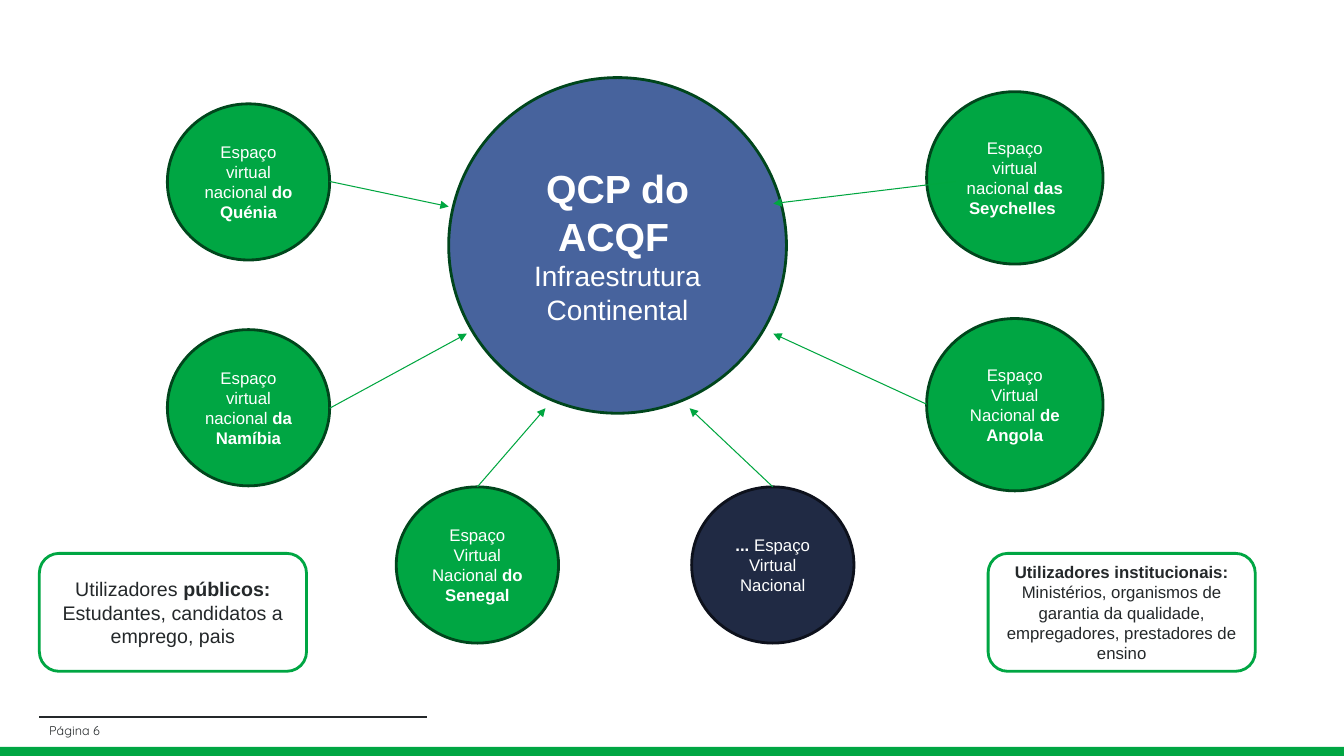
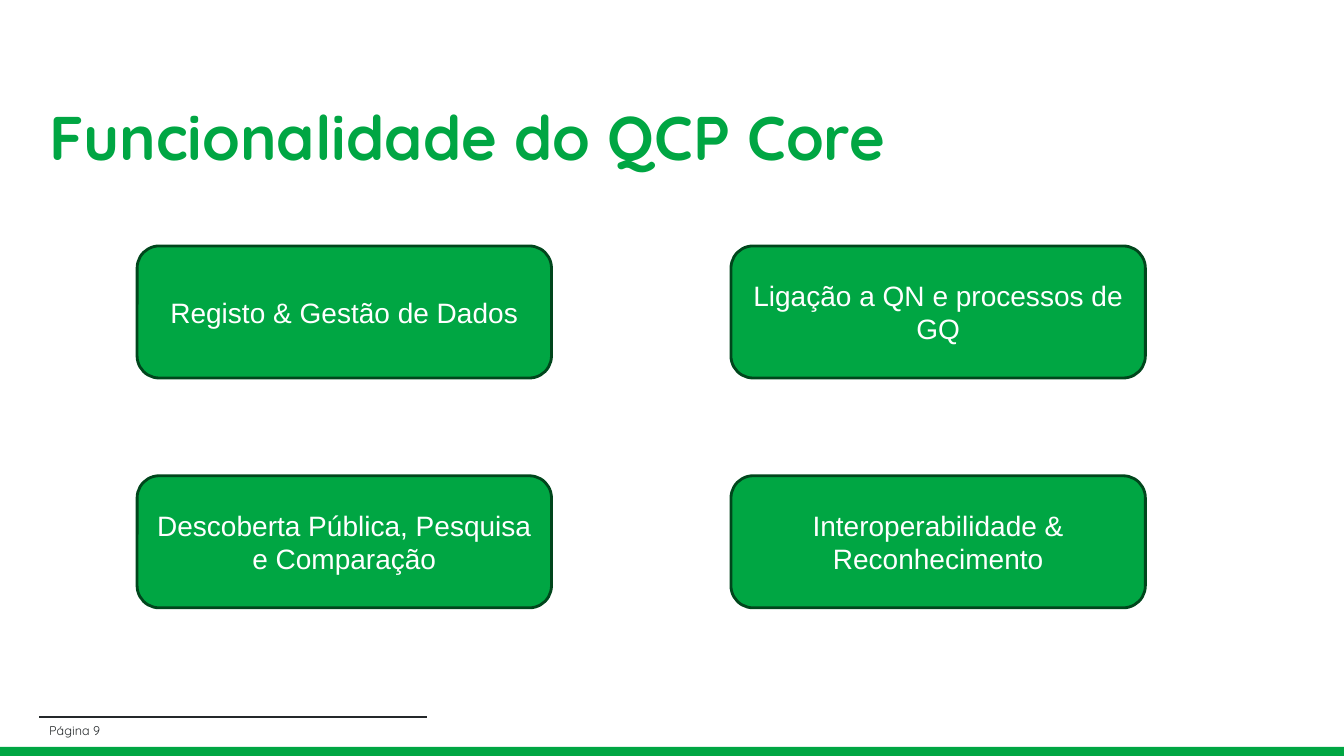
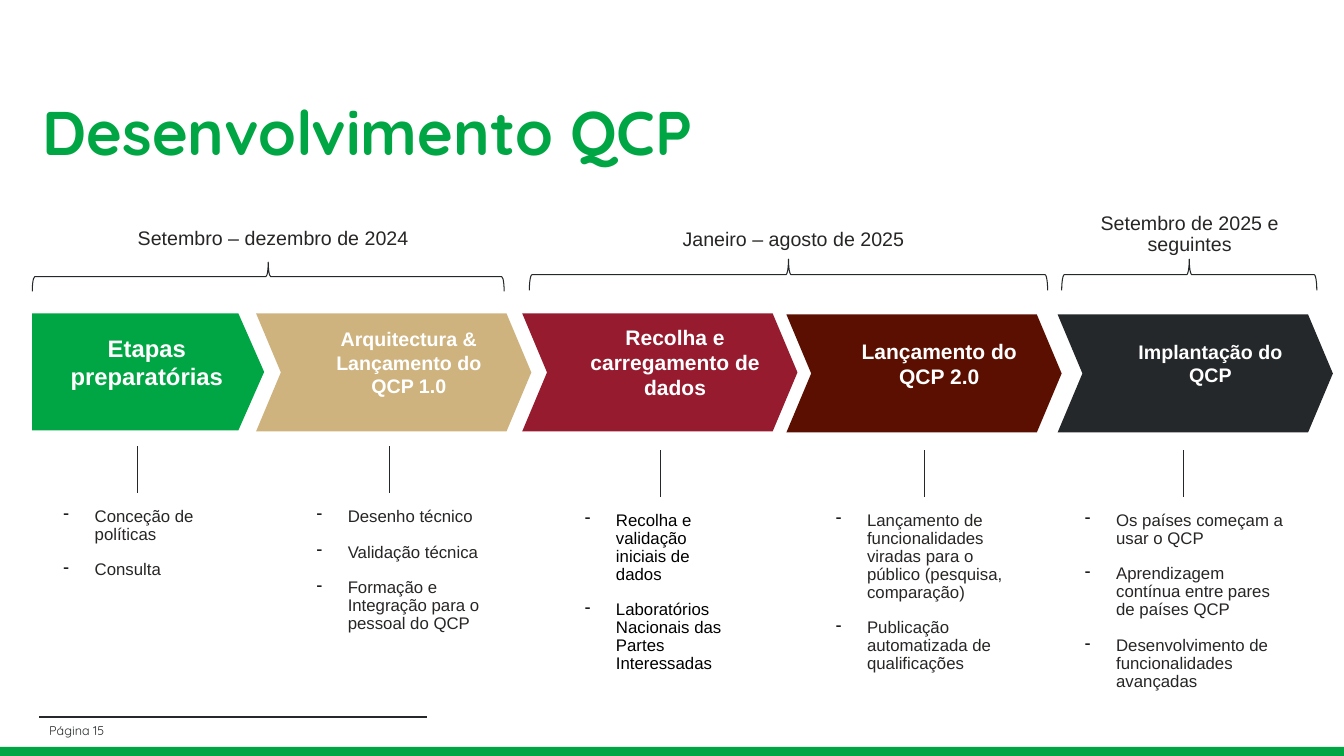
"""Build three slides about the QCP platform."""
from lxml import etree
from pptx import Presentation
from pptx import util as u
from pptx.dml.color import RGBColor
from pptx.enum import shapes, text
from pptx.oxml import ns

COLORS = {
    "green": "00A643", "arrow": "00A640", "forest": "00461C", "blue": "47639D",
    "navy": "202A44", "night": "0D111C", "ink": "24282A", "body": "282625",
    "white": "FFFFFF", "black": "000000", "sand": "CEB37E", "wine": "971B2F",
    "brown": "5B0F00",
}
SHAPE = shapes.MSO_SHAPE
CENTER, LEFT = text.PP_ALIGN.CENTER, text.PP_ALIGN.LEFT
MIDDLE, TOP = text.MSO_ANCHOR.MIDDLE, text.MSO_ANCHOR.TOP
INSET = (0.1, 0.05, 0.1, 0.05)


def rgb(name):
    """Return the palette colour."""
    return RGBColor.from_string(COLORS[name])


def add_bullet(p):
    """Give a paragraph a hanging black dash."""
    pPr = p._p.get_or_add_pPr()
    pPr.set("marL", str(u.Inches(0.31)))
    pPr.set("indent", str(-u.Inches(0.31)))
    clr = etree.SubElement(pPr, ns.qn("a:buClr"))
    etree.SubElement(clr, ns.qn("a:srgbClr"), val=COLORS["black"])
    etree.SubElement(pPr, ns.qn("a:buChar"), char="-")


def write(tf, paragraphs, size=12, color="white", font="Arial", bold=False,
          bold_size=None, align=CENTER, anchor=MIDDLE, inset=INSET,
          spacing=None, gap=0, bullet=False):
    """Fill a text frame; ** toggles bold and a newline breaks the line."""
    tf.word_wrap = True
    tf.auto_size = text.MSO_AUTO_SIZE.NONE
    tf.vertical_anchor = anchor
    tf.margin_left, tf.margin_top, tf.margin_right, tf.margin_bottom = map(u.Inches, inset)
    for i, paragraph in enumerate(paragraphs):
        p = tf.add_paragraph() if i else tf.paragraphs[0]
        if bullet:
            add_bullet(p)
        p.alignment = align
        if spacing:
            p.line_spacing = spacing
        if i and gap:
            p.space_before = u.Pt(gap)
        for j, part in enumerate(paragraph.split("**")):
            strong = bold != bool(j % 2)
            for k, line in enumerate(part.split("\n")):
                if k:
                    p.add_line_break()
                if not line:
                    continue
                r = p.add_run()
                r.text = line
                r.font.name, r.font.bold = font, strong
                r.font.size = u.Pt(bold_size if strong and bold_size else size)
                r.font.color.rgb = rgb(color)


class Deck:
    """Hold the shared style and the current slide."""

    def __init__(self):
        """Start an empty widescreen presentation."""
        self.prs = Presentation()
        self.prs.slide_width, self.prs.slide_height = u.Inches(13.33), u.Inches(7.5)
        self.s = None

    def slide(self, page, title=None, box=None):
        """Add a slide with its footer and optional title."""
        self.s = self.prs.slides.add_slide(self.prs.slide_layouts[5 if title else 6])
        self.shape(SHAPE.RECTANGLE, (0, 7.41, 13.33, 0.09), "green")
        self.line((0.39, 7.11), (4.24, 7.11), "ink", 1.5)
        if title:
            sp = self.s.shapes.title
            sp.left, sp.top, sp.width, sp.height = map(u.Inches, box)
            write(sp.text_frame, [title], size=44, color="green", font="Quicksand",
                  bold=True, align=LEFT, spacing=0.9)
        self.label((0.39, 7.15, 4.06, 0.19), [f"Página {page}"], size=9, color="ink",
                   font="Quicksand", align=LEFT)

    def shape(self, kind, box, fill=None, line=None, weight=2, paragraphs=(), **fmt):
        """Add a preset shape with optional text."""
        sp = self.s.shapes.add_shape(kind, *map(u.Inches, box))
        sp.shadow.inherit = False
        if fill:
            sp.fill.solid()
            sp.fill.fore_color.rgb = rgb(fill)
        else:
            sp.fill.background()
        if line:
            sp.line.color.rgb = rgb(line)
            sp.line.width = u.Pt(weight)
        else:
            sp.line.fill.background()
        if paragraphs:
            write(sp.text_frame, paragraphs, **fmt)
        return sp

    def label(self, box, paragraphs, **fmt):
        """Add a text box."""
        sp = self.s.shapes.add_textbox(*map(u.Inches, box))
        write(sp.text_frame, paragraphs, **fmt)

    def line(self, start, end, color, weight=0.75, arrow=False):
        """Add a straight line, with an arrowhead if asked."""
        cx = self.s.shapes.add_connector(shapes.MSO_CONNECTOR.STRAIGHT,
                                         *map(u.Inches, (*start, *end)))
        cx.line.color.rgb = rgb(color)
        cx.line.width = u.Pt(weight)
        if arrow:
            etree.SubElement(cx.line._get_or_add_ln(), ns.qn("a:tailEnd"), type="triangle")
        etree.SubElement(cx._element.spPr, ns.qn("a:effectLst"))
        return cx

    def brace(self, left, top, span, depth):
        """Add a horizontal brace that points up."""
        sp = self.shape(SHAPE.LEFT_BRACE, (left + (span - depth) / 2,
                        top + (depth - span) / 2, depth, span), line="ink", weight=0.75)
        sp.rotation = 90


def network_slide(deck):
    """Draw the hub and the national spaces around it."""
    deck.slide(6)
    deck.shape(SHAPE.OVAL, (4.45, 0.77, 3.35, 3.33), "blue", "forest",
               paragraphs=["**QCP do ACQF** \nInfraestrutura Continental"],
               size=20, bold_size=28)
    small, large = (1.61, 1.55), (1.75, 1.71)
    spaces = [
        ((1.66, 1.03), small, "Espaço virtual nacional **do Quénia**", (3.27, 1.8), (4.45, 2.05)),
        ((1.66, 3.27), small, "Espaço virtual nacional **da Namíbia**", (3.27, 4.05), (4.63, 3.31)),
        ((9.19, 0.91), large, "Espaço virtual nacional **das Seychelles **", (9.48, 1.8), (7.67, 2.02)),
        ((9.19, 3.16), large, "Espaço Virtual Nacional **de Angola**", (9.19, 4.01), (7.67, 3.31)),
        ((3.93, 4.83), small, "Espaço Virtual Nacional **do Senegal**", None, (5.41, 4.05)),
        ((6.86, 4.83), small, "**... **Espaço Virtual Nacional", None, (6.84, 4.05)),
    ]
    for pos, size, name, start, end in spaces:
        fill, edge = ("navy", "night") if name.startswith("**") else ("green", "forest")
        sp = deck.shape(SHAPE.FLOWCHART_CONNECTOR, pos + size, fill, edge, paragraphs=[name])
        cx = deck.line(start or pos, end, "arrow", arrow=True)
        if not start:
            cx.begin_connect(sp, 0)
    users = [
        (0.39, 14, ["Utilizadores **públicos:\n**Estudantes, candidatos a emprego, pais"]),
        (9.8, 12, ["**Utilizadores institucionais:**",
                   "Ministérios, organismos de garantia da qualidade, "
                   "empregadores, prestadores de ensino"]),
    ]
    for left, size, paragraphs in users:
        deck.shape(SHAPE.ROUNDED_RECTANGLE, (left, 5.49, 2.65, 1.17), "white", "green",
                   paragraphs=paragraphs, size=size, color="ink")


def features_slide(deck):
    """Draw the grid of four core features."""
    deck.slide(9, "Funcionalidade do QCP Core", (0.39, 0.67, 12.54, 1.45))
    features = ["Registo & Gestão de Dados", "Ligação a QN e processos de GQ",
                "Descoberta Pública, Pesquisa e Comparação",
                "Interoperabilidade & Reconhecimento"]
    for i, feature in enumerate(features):
        row, col = divmod(i, 2)
        deck.shape(SHAPE.ROUNDED_RECTANGLE, (1.36 + 5.89 * col, 2.44 + 2.28 * row, 4.11, 1.31),
                   "green", "forest", paragraphs=[feature], size=20)


def timeline_slide(deck):
    """Draw the phases with their periods and notes."""
    deck.slide(15, "Desenvolvimento QCP", (0.32, 0.71, 12.54, 1.26))
    periods = [
        ((0.42, 2.22, 4.58, 0.38), "Setembro – dezembro de 2024", (0.32, 2.6, 4.68, 0.29)),
        ((5.3, 2.23, 5.14, 0.38), "Janeiro – agosto de 2025", (5.25, 2.57, 5.14, 0.31)),
        ((10.27, 2.07, 3.06, 0.31), "Setembro de 2025 e seguintes", (10.53, 2.57, 2.53, 0.31)),
    ]
    for box, period, brace in periods:
        deck.label(box, [period], size=14, color="body", anchor=TOP,
                   inset=(0.53, 0.05, 0.53, 0.13), spacing=0.89)
        deck.brace(*brace)
    phases = [
        ((0.32, 3.11, 2.3, 1.16), "green", 17, "Etapas preparatórias",
         (1.36, 4.42), (0.1, 2.73, 1.6), 0.53, "body",
         ["Conceção de políticas", "Consulta"]),
        ((2.54, 3.11, 2.73, 1.17), "sand", 14, "Arquitectura & Lançamento do QCP 1.0",
         (3.86, 4.42), (2.61, 2.86, 1.6), 0.53, "body",
         ["Desenho técnico", "Validação técnica",
          "Formação e Integração para o pessoal do QCP"]),
        ((5.18, 3.11, 2.73, 1.17), "wine", 15, "Recolha e carregamento de dados",
         (6.55, 4.46), (5.27, 2.53, 1.2), 0.53, "black",
         ["Recolha e validação iniciais de dados",
          "Laboratórios Nacionais das Partes Interessadas"]),
        ((7.8, 3.12, 2.73, 1.17), "brown", 15, "Lançamento do QCP 2.0",
         (9.17, 4.46), (7.8, 2.73, 2.08), 0.49, "body",
         ["Lançamento de funcionalidades viradas para o público (pesquisa, comparação)",
          "Publicação automatizada de qualificações"]),
        ((10.49, 3.12, 2.73, 1.17), "ink", 14, "Implantação do QCP",
         (11.74, 4.46), (10.27, 2.99, 2.08), 0.49, "body",
         ["Os países começam a usar o QCP",
          "Aprendizagem contínua entre pares de países QCP",
          "Desenvolvimento de funcionalidades avançadas"]),
    ]
    for i, (box, fill, size, name, (x, y), notes, indent, color, items) in enumerate(phases):
        kind, adj, inset = (SHAPE.CHEVRON, 0.21, 0.4) if i else (SHAPE.PENTAGON, 0.22, 0.2)
        sp = deck.shape(kind, box, fill, paragraphs=[name], size=size, bold=True,
                        inset=(inset, 0, 0.1, 0.2))
        sp.adjustments[0] = adj
        deck.line((x, y + 0.47), (x, y), "ink")
        left, width, height = notes
        deck.label((left, y + 0.57, width, height), items, color=color, align=LEFT,
                   anchor=TOP, inset=(indent, 0.05, 0.53, 0.13), spacing=0.89,
                   gap=12.7, bullet=True)


def main():
    """Build and save the deck."""
    deck = Deck()
    network_slide(deck)
    features_slide(deck)
    timeline_slide(deck)
    deck.prs.save("out.pptx")


if __name__ == "__main__":
    main()
